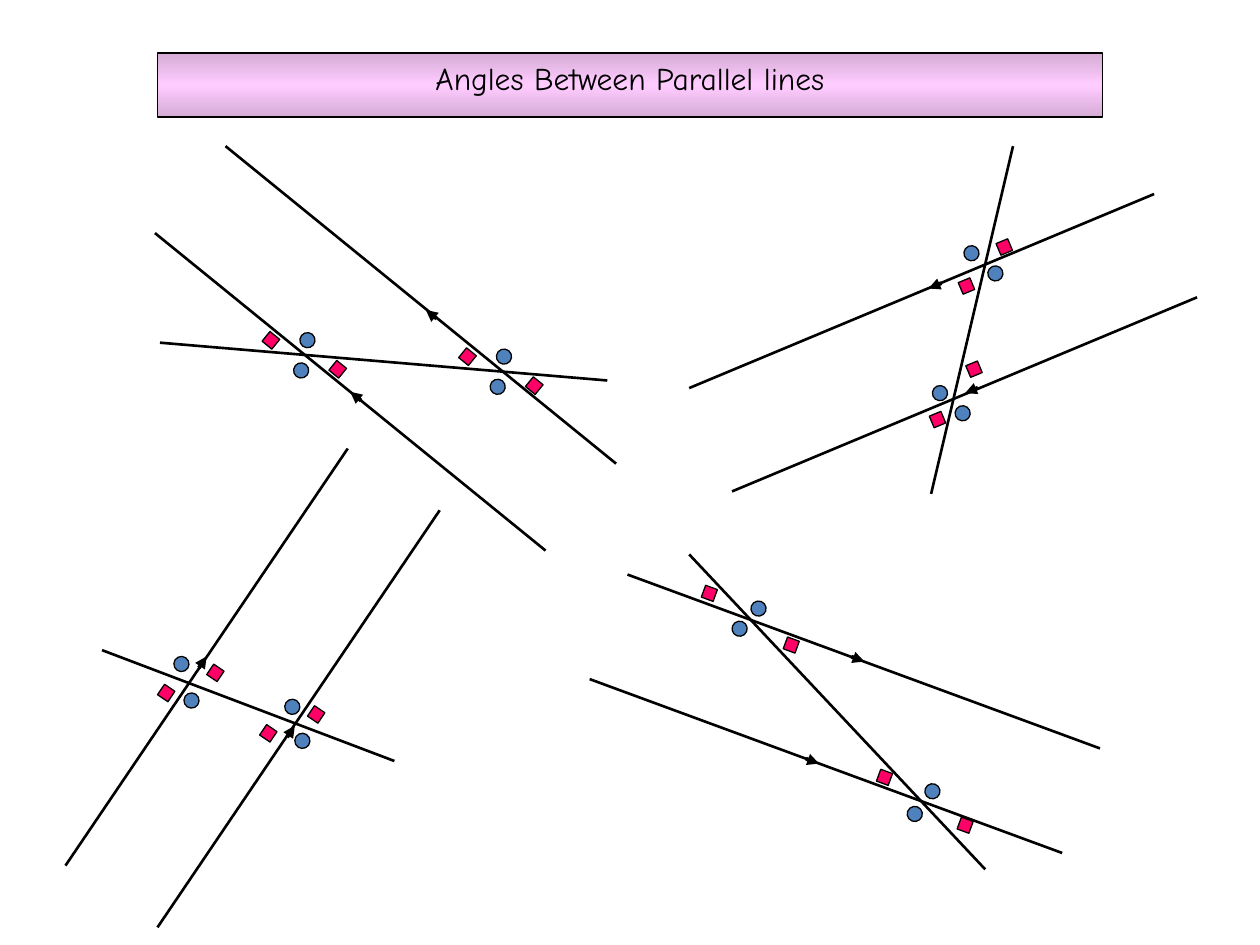
"""Build a slide of four parallel-line diagrams with their equal angles marked."""
import math
from dataclasses import dataclass

import pptx
import pptx.dml.color
import pptx.enum.shapes
import pptx.enum.text
import pptx.oxml.ns
import pptx.util
from lxml import etree

Inches = pptx.util.Inches
Pt = pptx.util.Pt
RGB = pptx.dml.color.RGBColor.from_string
SHAPE = pptx.enum.shapes.MSO_SHAPE
qn = pptx.oxml.ns.qn


@dataclass(frozen=True)
class Theme:
    """Colours, type, line weights and mark sizes."""
    ink: str = "000000"
    dot: str = "4F81BD"
    square: str = "FF0066"
    banner: tuple = ("D5ABD5", "FFCCFF", "D5ABD5")
    font: str = "Comic Neue"
    title_size: float = 18
    outline: float = 0.75
    rule: float = 1.5
    arrow: float = 2.25
    arrow_length: float = 0.11
    dot_size: float = 0.12
    square_size: float = 0.1


@dataclass(frozen=True)
class Diagram:
    """A box's left and top in inches, and the parts measured from them."""
    box: tuple
    heading: tuple
    starts: tuple
    tips: tuple
    transversal: tuple
    dots: tuple
    squares: tuple


THEME = Theme()

DIAGRAMS = (
    Diagram(
        box=(1.23, 1.16),
        heading=(-3.1, -2.52),
        starts=((3.1, 3.21), (3.66, 2.52)),
        tips=((1.55, 1.95), (2.15, 1.3)),
        transversal=((3.59, 1.86), (0.04, 1.56)),
        dots=((1.1, 1.72), (1.15, 1.48), (2.66, 1.85), (2.71, 1.61)),
        squares=((0.87, 1.49), (1.4, 1.72), (2.43, 1.62), (2.96, 1.85)),
    ),
    Diagram(
        box=(5.47, 1.16),
        heading=(-3.69, 1.54),
        starts=((4.03, 1.2), (3.69, 0.38)),
        tips=((2.19, 1.96), (1.9, 1.13)),
        transversal=((2.57, 0), (1.92, 2.76)),
        dots=((2.11, 2.06), (1.93, 1.9), (2.37, 0.95), (2.18, 0.79)),
        squares=((1.92, 2.12), (2.21, 1.72), (2.15, 1.06), (2.45, 0.75)),
    ),
    Diagram(
        box=(0.52, 3.56),
        heading=(2.24, -3.31),
        starts=((0, 3.31), (0.73, 3.8)),
        tips=((1.12, 1.65), (1.82, 2.2)),
        transversal=((2.61, 2.48), (0.29, 1.6)),
        dots=((0.86, 1.65), (0.94, 1.94), (1.74, 1.99), (1.82, 2.26)),
        squares=((0.75, 1.89), (1.14, 1.73), (1.56, 2.21), (1.94, 2.06)),
    ),
    Diagram(
        box=(4.68, 4.4),
        heading=(3.75, 1.38),
        starts=((0.3, 0.16), (0, 0.99)),
        tips=((2.18, 0.85), (1.82, 1.66)),
        transversal=((3.14, 2.5), (0.79, 0)),
        dots=((1.28, 0.37), (1.13, 0.53), (2.66, 1.82), (2.52, 2)),
        squares=((0.9, 0.26), (1.55, 0.67), (2.29, 1.72), (2.93, 2.1)),
    ),
)


def shift(point, by, scale=1):
    """Move a point by a scaled vector."""
    return point[0] + by[0] * scale, point[1] + by[1] * scale


def add_line(shapes, start, end, width, arrow=False):
    """Draw a straight line, with an arrowhead at its end if asked."""
    line = shapes.add_connector(
        pptx.enum.shapes.MSO_CONNECTOR.STRAIGHT, *map(Inches, start + end))
    line.line.color.rgb = RGB(THEME.ink)
    line.line.width = Pt(width)
    if arrow:
        etree.SubElement(line.line._get_or_add_ln(), qn("a:tailEnd"), type="triangle")
    etree.SubElement(line._element.spPr, qn("a:effectLst"))


def add_outlined(shapes, kind, left, top, width, height):
    """Add a shadowless preset shape with a thin outline."""
    sp = shapes.add_shape(kind, *map(Inches, (left, top, width, height)))
    sp.shadow.inherit = False
    sp.line.color.rgb = RGB(THEME.ink)
    sp.line.width = Pt(THEME.outline)
    return sp


def add_marks(shapes, kind, box, points, size, color, angle):
    """Place equal angle marks turned to the given angle."""
    for point in points:
        sp = add_outlined(shapes, kind, *shift(point, box), size, size)
        sp.rotation = angle
        sp.fill.solid()
        sp.fill.fore_color.rgb = RGB(color)


def add_diagram(slide, d):
    """Draw two parallels, their transversal and the angle marks in one group."""
    shapes = slide.shapes.add_group_shape().shapes
    length = math.hypot(*d.heading)
    angle = math.degrees(math.atan2(d.heading[1], d.heading[0])) % 360
    for point in d.starts:
        start = shift(point, d.box)
        add_line(shapes, start, shift(start, d.heading), THEME.rule)
    for point in d.tips:
        tip = shift(point, d.box)
        tail = shift(tip, d.heading, -THEME.arrow_length / length)
        add_line(shapes, tail, tip, THEME.arrow, arrow=True)
    start, end = (shift(point, d.box) for point in d.transversal)
    add_line(shapes, start, end, THEME.rule)
    add_marks(shapes, SHAPE.OVAL, d.box, d.dots, THEME.dot_size, THEME.dot, angle)
    add_marks(shapes, SHAPE.RECTANGLE, d.box, d.squares,
              THEME.square_size, THEME.square, angle)


def add_banner(slide, box, text):
    """Add the title on a vertical three-stop gradient."""
    sp = add_outlined(slide.shapes, SHAPE.RECTANGLE, *box)
    sp.fill.gradient()
    sp.fill.gradient_angle = 270
    stops = sp.fill._fill._gradFill.find(qn("a:gsLst"))
    for stop in list(stops):
        stops.remove(stop)
    for i, color in enumerate(THEME.banner):
        stop = etree.SubElement(stops, qn("a:gs"), pos=str(i * 50000))
        etree.SubElement(stop, qn("a:srgbClr"), val=color)
    tf = sp.text_frame
    tf.word_wrap = True
    tf.vertical_anchor = pptx.enum.text.MSO_ANCHOR.TOP
    tf.text = text
    p = tf.paragraphs[0]
    p.alignment = pptx.enum.text.PP_ALIGN.CENTER
    r = p.runs[0]
    r.font.name = THEME.font
    r.font.size = Pt(THEME.title_size)
    r.font.color.rgb = RGB(THEME.ink)


def main():
    """Build and save the slide."""
    prs = pptx.Presentation()
    prs.slide_width = Inches(10)
    prs.slide_height = Inches(7.5)
    slide = prs.slides.add_slide(prs.slide_layouts[6])
    add_banner(slide, (1.25, 0.42, 7.5, 0.51), "Angles Between Parallel lines")
    for diagram in DIAGRAMS:
        add_diagram(slide, diagram)
    prs.save("out.pptx")


if __name__ == "__main__":
    main()
